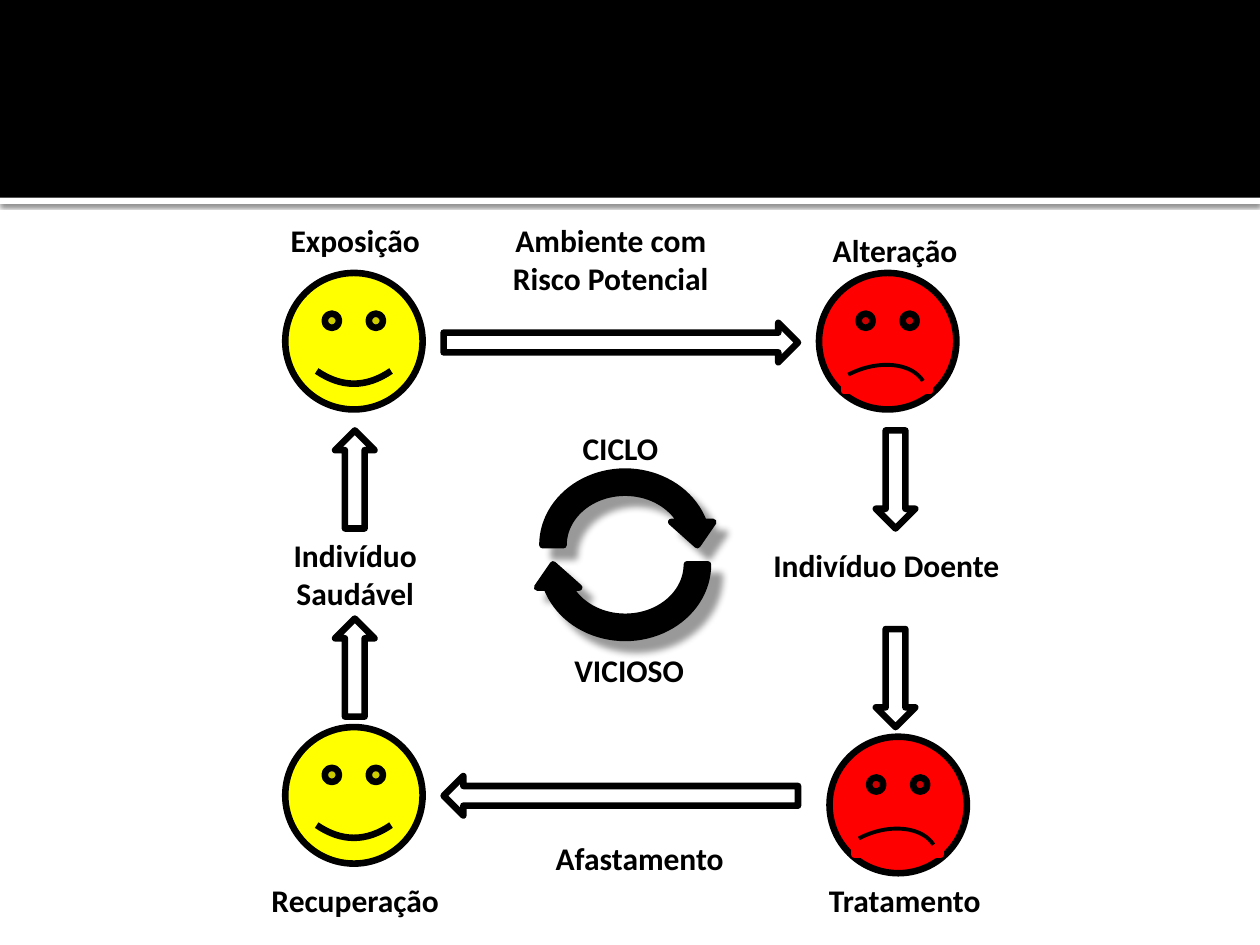
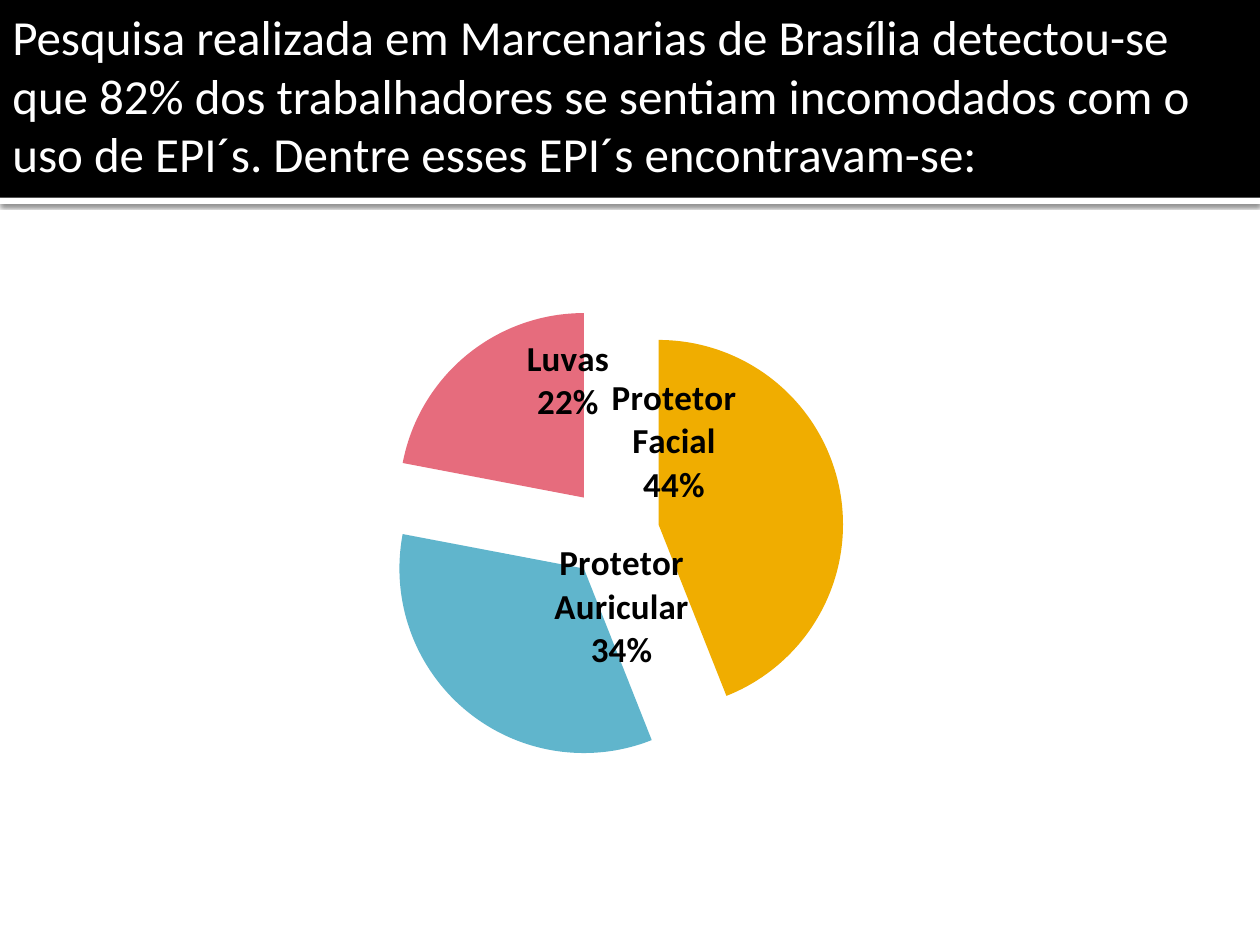
"""Builds two slides on workplace risk: the vicious cycle and the survey on protective equipment."""
import copy
from collections import namedtuple

from pptx import Presentation
from pptx import util as u
from pptx.chart import data as chart_data
from pptx.dml import color
from pptx.enum import chart as chart_enum
from pptx.enum import shapes, text
from pptx.oxml import parse_xml
from pptx.oxml import ns, xmlchemy

COLOURS = {
    "black": "000000", "white": "FFFFFF", "healthy": "FFFF00", "ill": "FF0000",
    "facial": "F0AD00", "auricular": "60B5CC", "gloves": "E66C7D",
}
FONT = "Calibri"
OUTLINE = 3.78
Box = namedtuple("Box", "left top width height")
SLIDE = Box(0, 0, 720, 540)
BAND = Box(0, 0, 720, 113)
CYCLE = Box(130, 123, 460, 406)
SURVEY = Box(56, 129.6, 613.5, 376.5)
FACE = (78.5, 78)
PRESET = shapes.MSO_SHAPE


def rgb(name):
    return color.RGBColor.from_string(COLOURS[name])


def place(box, left, top, width, height):
    return Box(box.left + left, box.top + top, width, height)


def draw(slide, preset, box, fill, line=None, weight=OUTLINE, rotation=0):
    part = slide.shapes.add_shape(preset, *map(u.Pt, box))
    part.shadow.inherit = False
    part.rotation = rotation
    part.fill.solid()
    part.fill.fore_color.rgb = rgb(fill)
    if line:
        part.line.color.rgb = rgb(line)
        part.line.width = u.Pt(weight)
    else:
        part.line.fill.background()
    return part


def cast_shadow(part, opacity, blur, distance, angle):
    properties = part._element.spPr
    properties.remove(properties.find(ns.qn("a:effectLst")))
    properties.append(parse_xml(
        f'<a:effectLst {ns.nsdecls("a")}><a:outerShdw blurRad="{u.Pt(blur)}" '
        f'dist="{u.Pt(distance)}" dir="{angle * 60000}" algn="tl" rotWithShape="0">'
        f'<a:srgbClr val="{COLOURS["black"]}"><a:alpha val="{opacity * 1000}"/>'
        '</a:srgbClr></a:outerShdw></a:effectLst>'))


def write(slide, box, wording, size, ink, bold=False, align=text.PP_ALIGN.LEFT):
    frame = slide.shapes.add_textbox(*map(u.Pt, box)).text_frame
    frame.word_wrap = True
    frame.text = wording
    paragraph = frame.paragraphs[0]
    paragraph.alignment = align
    font = paragraph.runs[0].font
    font.name, font.size, font.bold = FONT, u.Pt(size), bold
    font.color.rgb = rgb(ink)


def draw_band(slide, box):
    edge = draw(slide, PRESET.RECTANGLE, place(box, 0, box.height, box.width, 3.6), "white")
    cast_shadow(edge, 60, 2.5, 0.8, 90)
    draw(slide, PRESET.RECTANGLE, box, "black")


def draw_sad_face(slide, box):
    draw(slide, PRESET.SMILEY_FACE, box, "ill", "black")
    draw(slide, PRESET.RECTANGLE, place(box, 14.4, 51.5, 49, 16), "ill", "ill")
    mouth = draw(slide, PRESET.ARC, place(box, -1.5, 54, 64, 42), "ill", "black", 2.25, 340.6)
    mouth.adjustments[0], mouth.adjustments[1] = 150.14, 212.85


def draw_arrows(slide, box):
    long, short = (202.5, 22.5), (22.5, 56)
    for preset, left, top, size, rotation in (
        (PRESET.RIGHT_ARROW, 123.5, 61.5, long, 0),
        (PRESET.DOWN_ARROW, 370.5, 123, short, 0),
        (PRESET.DOWN_ARROW, 370.5, 236.5, short, 0),
        (PRESET.RIGHT_ARROW, 123.5, 320.5, long, 180),
        (PRESET.UP_ARROW, 61.5, 230.5, short, 0),
        (PRESET.UP_ARROW, 61.5, 123, short, 0),
    ):
        draw(slide, preset, place(box, left, top, *size), "white", "black", rotation=rotation)
    for top, rotation in ((140.5, 0), (151.5, 180)):
        turn = draw(slide, PRESET.CIRCULAR_ARROW, place(box, 174, top, 106.5, 96),
                    "black", "black", rotation=rotation)
        cast_shadow(turn, 40, 4, 9, 45)


def draw_cycle(slide, box):
    for top in (33, 292.5):
        draw(slide, PRESET.SMILEY_FACE, place(box, 33, top, *FACE), "healthy", "black")
    for left, top in ((344, 298), (338, 33)):
        draw_sad_face(slide, place(box, left, top, *FACE))
    draw_arrows(slide, box)
    for stage, left, top, height in (
        ("Ambiente com Risco Potencial", 146, 0, 51),
        ("Indivíduo Doente", 303.5, 185.5, 51),
        ("Alteração", 308.5, 5.5, 29),
        ("Tratamento", 314, 377, 29),
        ("Afastamento", 162.5, 353, 29),
        ("Recuperação", 0, 377, 29),
        ("Indivíduo Saudável", 0, 180, 51),
        ("Exposição", 0, 0, 29),
        ("CICLO", 151.5, 118.5, 29),
        ("VICIOSO", 156.5, 245.5, 29),
    ):
        write(slide, place(box, left, top, 146, height), stage, 18, "black", True,
              text.PP_ALIGN.CENTER)


def manual_layout(**values):
    entries = "".join(f'<c:{key} val="{value}"/>' for key, value in values.items())
    return parse_xml(f'<c:layout {ns.nsdecls("c")}><c:manualLayout>{entries}'
                     '</c:manualLayout></c:layout>')


def element(tag, **attributes):
    made = xmlchemy.OxmlElement(tag)
    for key, value in attributes.items():
        made.set(key, str(value))
    return made


def label_slices(series, offsets):
    labels = series.data_labels
    labels.show_category_name = labels.show_percentage = True
    labels.show_value = False
    labels.number_format, labels.number_format_is_linked = "0%", False
    labels.position = chart_enum.XL_LABEL_POSITION.CENTER
    labels.font.name, labels.font.size, labels.font.bold = FONT, u.Pt(20), True
    labels.font.color.rgb = rgb("black")
    common = labels._element
    separator = element("c:separator")
    separator.text = "\n"
    common.find(ns.qn("c:showBubbleSize")).addnext(separator)
    settings = [part for part in common if part.tag != ns.qn("c:showLeaderLines")]
    for index, (x, y) in enumerate(offsets):
        label = element("c:dLbl")
        label.append(element("c:idx", val=index))
        label.append(manual_layout(x=x, y=y))
        label.extend(copy.deepcopy(settings))
        common.insert(index, label)


def draw_survey(slide, box):
    answers = chart_data.CategoryChartData()
    answers.categories = ["Protetor Facial", "Protetor Auricular", "Luvas"]
    answers.add_series("Series 1", (44, 34, 22))
    chart = slide.shapes.add_chart(
        chart_enum.XL_CHART_TYPE.PIE, *map(u.Pt, box), answers).chart
    chart.has_legend = chart.has_title = False
    chart.font.name, chart.font.size = FONT, u.Pt(10)
    chart.font.color.rgb = rgb("black")
    plot = chart.plots[0]
    plot.vary_by_categories = True
    series = plot.series[0]
    for index, slice_colour in enumerate(("facial", "auricular", "gloves")):
        look = series.points[index].format
        look.fill.solid()
        look.fill.fore_color.rgb = rgb(slice_colour)
        look.line.fill.background()
    series._element.find(ns.qn("c:dPt")).addprevious(element("c:explosion", val=25))
    label_slices(series, ((-0.07, -0.1), (0.09, -0.05), (0.04, -0.07)))
    area = chart._chartSpace.chart.plotArea
    for automatic in area.findall(ns.qn("c:layout")):
        area.remove(automatic)
    area.insert(0, manual_layout(layoutTarget="inner", xMode="edge", yMode="edge",
                                 x=0.265, y=0.115, w=0.43, h=0.7))


def main():
    deck = Presentation()
    deck.slide_width, deck.slide_height = u.Pt(SLIDE.width), u.Pt(SLIDE.height)
    cycle, survey = (deck.slides.add_slide(deck.slide_layouts[6]) for _ in range(2))
    for slide in (cycle, survey):
        draw_band(slide, BAND)
    draw_cycle(cycle, CYCLE)
    draw_survey(survey, SURVEY)
    write(survey, place(BAND, 0, 0, BAND.width, 109),
          "Pesquisa realizada em Marcenarias de Brasília detectou-se que 82% dos "
          "trabalhadores se sentiam incomodados com o uso de EPI´s. Dentre esses "
          "EPI´s encontravam-se:", 28, "white")
    deck.save("out.pptx")


if __name__ == "__main__":
    main()
